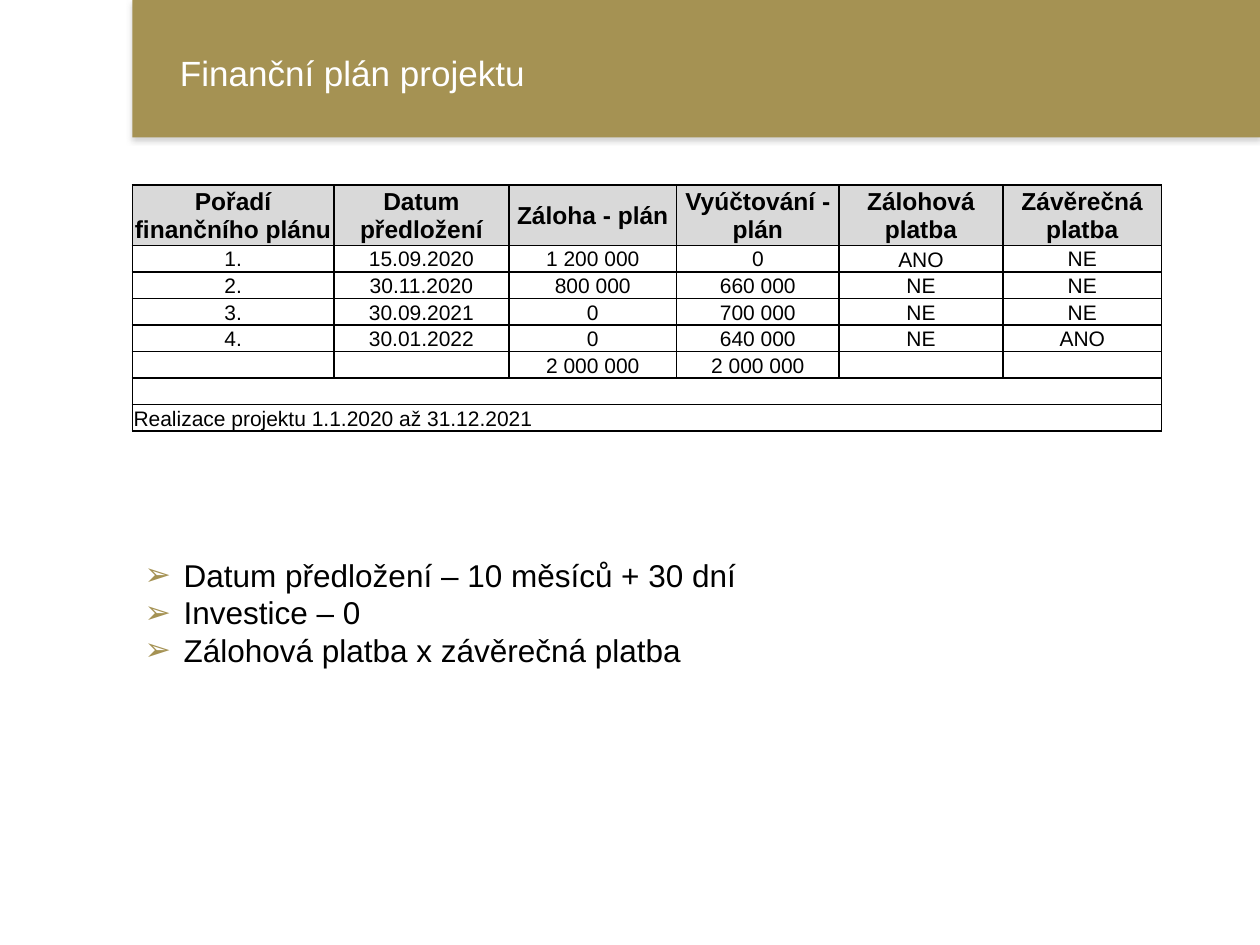
from lxml.etree import SubElement
from pptx import Presentation
from pptx.dml.color import RGBColor
from pptx.enum.shapes import MSO_SHAPE as SHAPE
from pptx.enum.text import MSO_ANCHOR as ANCHOR, PP_ALIGN as ALIGN
from pptx.oxml.ns import qn
from pptx.util import Inches, Pt

GOLD = RGBColor(0xA5, 0x92, 0x53)
GREY = RGBColor(0xD9, 0xD9, 0xD9)
SHADOW = RGBColor(0x80, 0x80, 0x80)
WHITE = RGBColor(0xFF, 0xFF, 0xFF)
BLACK = RGBColor(0, 0, 0)

HEADERS = ["Pořadí finančního plánu", "Datum předložení", "Záloha - plán",
           "Vyúčtování - plán", "Zálohová platba", "Závěrečná platba"]
ROWS = [
    ["1.", "15.09.2020", "1 200 000", "0", "ANO", "NE"],
    ["2.", "30.11.2020", "800 000", "660 000", "NE", "NE"],
    ["3.", "30.09.2021", "0", "700 000", "NE", "NE"],
    ["4.", "30.01.2022", "0", "640 000", "NE", "ANO"],
    ["", "", "2 000 000", "2 000 000", "", ""],
    [""],
    ["Realizace projektu 1.1.2020 až 31.12.2021"],
]
COL_WIDTHS = [1.6, 1.39, 1.33, 1.29, 1.3, 1.26]
HEADER_HEIGHT, ROW_HEIGHT = 0.38, 0.21
POINTS = ["Datum předložení – 10 měsíců + 30 dní", "Investice – 0",
          "Zálohová platba x závěrečná platba"]


def add(parent, tag, **attrs):
    return SubElement(parent, qn(tag), {k: str(v) for k, v in attrs.items()})


class SlideBuilder:
    def __init__(self, slide, font="Arial"):
        self.s = slide
        self.font = font

    def run(self, p, text, size, color=BLACK, bold=False):
        r = p.add_run()
        r.text = text
        f = r.font
        f.name, f.size, f.bold = self.font, Pt(size), bold
        f.color.rgb = color

    def band(self, x, y, w, h, color):
        sp = self.s.shapes.add_shape(SHAPE.RECTANGLE, Inches(x), Inches(y),
                                     Inches(w), Inches(h))
        sp.shadow.inherit = False
        sp.fill.solid()
        sp.fill.fore_color.rgb = color
        sp.line.fill.background()
        effects = sp._element.spPr.find(qn("a:effectLst"))
        shadow = add(effects, "a:outerShdw", blurRad=Pt(3.1), dist=Pt(1.8),
                     dir=90 * 60000, algn="t", rotWithShape=0)
        add(add(shadow, "a:srgbClr", val=SHADOW), "a:alpha", val=35000)

    def text(self, x, y, w, h, lines, size, color=BLACK,
             anchor=ANCHOR.TOP, bullet=None):
        tf = self.s.shapes.add_textbox(Inches(x), Inches(y), Inches(w),
                                       Inches(h)).text_frame
        tf.word_wrap = True
        tf.vertical_anchor = anchor
        for i, line in enumerate(lines):
            p = tf.add_paragraph() if i else tf.paragraphs[0]
            if bullet:
                self.bullet(p, bullet)
            self.run(p, line, size, color)

    def bullet(self, p, char):
        pPr = p._p.get_or_add_pPr()
        pPr.set("marL", str(Inches(0.31)))
        pPr.set("indent", str(-Inches(0.31)))
        add(add(pPr, "a:buClr"), "a:srgbClr", val=GOLD)
        add(pPr, "a:buFont", typeface=self.font)
        add(pPr, "a:buChar", char=char)

    def cell(self, cell, text, size, fill, anchor, align, bold=False):
        cell.margin_left = cell.margin_right = cell.margin_top = Inches(0.01)
        cell.margin_bottom = 0
        cell.vertical_anchor = anchor
        p = cell.text_frame.paragraphs[0]
        p.alignment = align
        if text:
            self.run(p, text, size, bold=bold)
        else:
            add(p._p, "a:endParaRPr", sz=size * 100)
        # Borders come before the fill in the cell properties
        tcPr = cell._tc.get_or_add_tcPr()
        for side in ("a:lnL", "a:lnR", "a:lnT", "a:lnB"):
            ln = add(tcPr, side, w=Pt(1))
            add(add(ln, "a:solidFill"), "a:srgbClr", val=BLACK)
        cell.fill.solid()
        cell.fill.fore_color.rgb = fill

    def table(self, x, y, headers, rows):
        n = len(headers)
        height = HEADER_HEIGHT + ROW_HEIGHT * len(rows)
        table = self.s.shapes.add_table(
            len(rows) + 1, n, Inches(x), Inches(y),
            Inches(sum(COL_WIDTHS)), Inches(height)).table
        for col, width in zip(table.columns, COL_WIDTHS):
            col.width = Inches(width)
        for i, row in enumerate([headers] + rows):
            table.rows[i].height = Inches(ROW_HEIGHT if i else HEADER_HEIGHT)
            merged = len(row) == 1
            if merged:
                table.cell(i, 0).merge(table.cell(i, n - 1))
            for j, text in enumerate(row + [""] * (n - len(row))):
                middle = i == 0 or (i == 1 and j != 4)
                self.cell(table.cell(i, j), text, 12 if i else 14,
                          WHITE if i else GREY,
                          ANCHOR.MIDDLE if middle else ANCHOR.BOTTOM,
                          ALIGN.LEFT if merged else ALIGN.CENTER,
                          bold=i == 0)


def main():
    prs = Presentation()
    prs.slide_width, prs.slide_height = Inches(10), Inches(7.5)
    b = SlideBuilder(prs.slides.add_slide(prs.slide_layouts[6]))

    # Title band
    b.band(1.05, 0, 8.95, 1.09, GOLD)
    b.text(1.33, 0.4, 8.17, 0.35, ["Finanční plán projektu"], 20, WHITE,
           anchor=ANCHOR.MIDDLE)

    # Notes on the plan
    b.text(1.05, 4.36, 8.45, 1.31, POINTS, 18, bullet="➢")

    # Financial plan
    b.table(1.05, 1.47, HEADERS, ROWS)

    prs.save("out.pptx")


if __name__ == "__main__":
    main()
